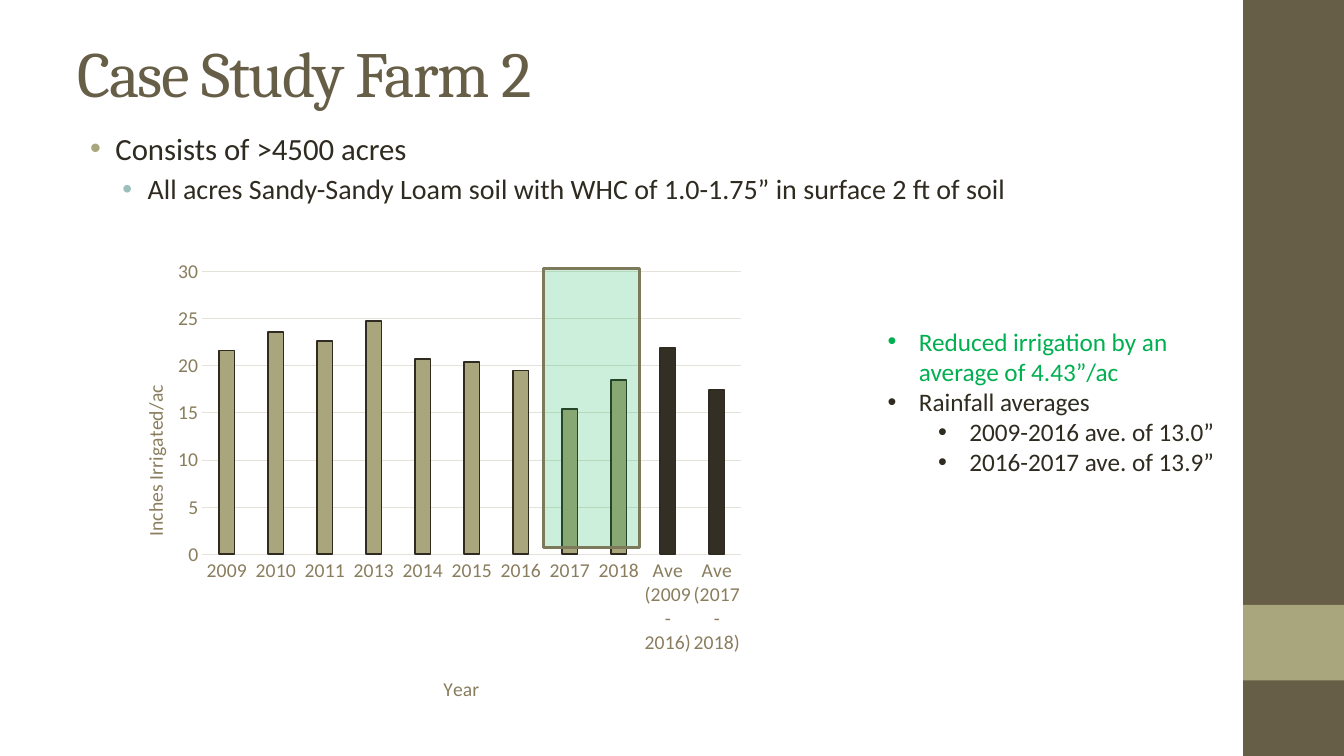
import pptx
import pptx.chart.data
import pptx.dml.color
import pptx.enum.chart
import pptx.enum.shapes
import pptx.enum.text
import pptx.oxml
import pptx.oxml.ns
import pptx.util
import lxml.etree

theme = {
    "heading_font": "Cambria", "body_font": "Calibri",
    "brown": "675E47", "khaki": "A9A57C", "teal": "9CBEBD", "ink": "2F2B20",
    "green": "00B050", "dark_bar": "342F24", "label": "897D5D",
    "grid": "E5E2D9", "frame": "7D7A5C",
    "title": 46, "point": 22, "subpoint": 20, "note": 18, "axis": 14,
}

deck = pptx.Presentation()
deck.slide_width = pptx.util.Inches(13.333)
deck.slide_height = pptx.util.Inches(7.5)
page = deck.slides.add_slide(deck.slide_layouts[6])
column = deck.slide_width / 160
row = deck.slide_height / 90


def place(left, top, width, height):
    return [int(left * column), int(top * row), int(width * column), int(height * row)]


def write(para, text, size, color="ink", font="body_font", bullet=None, indent=0, hang=0, before=0):
    para.space_before = pptx.util.Pt(before)
    if bullet:
        properties = para._p.get_or_add_pPr()
        properties.set("marL", str(pptx.util.Inches(indent)))
        properties.set("indent", str(-pptx.util.Inches(hang)))
        for markup in (f'<a:buClr %s><a:srgbClr val="{theme[bullet]}"/></a:buClr>',
                       '<a:buFont %s typeface="Arial"/>', '<a:buChar %s char="•"/>'):
            properties.append(pptx.oxml.parse_xml(markup % pptx.oxml.ns.nsdecls("a")))
    span = para.add_run()
    span.text = text
    span.font.size = pptx.util.Pt(theme[size])
    span.font.name = theme[font]
    span.font.bold = False
    span.font.color.rgb = pptx.dml.color.RGBColor.from_string(theme[color])
    return span


for top, height, color in [(0, 90, "brown"), (72, 9, "khaki")]:
    band = page.shapes.add_shape(pptx.enum.shapes.MSO_SHAPE.RECTANGLE, *place(148, top, 12, height))
    band.shadow.inherit = False
    band.fill.solid()
    band.fill.fore_color.rgb = pptx.dml.color.RGBColor.from_string(theme[color])
    band.line.fill.background()

title = page.shapes.add_textbox(*place(8, 1, 133.3, 15)).text_frame
title.word_wrap = True
title.vertical_anchor = pptx.enum.text.MSO_ANCHOR.MIDDLE
heading = write(title.paragraphs[0], "Case Study Farm 2", "title", "brown", "heading_font")
heading._r.get_or_add_rPr().set("spc", "-100")

overview = [
    ("Consists of >4500 acres", dict(size="point", bullet="khaki", indent=0.38, hang=0.25)),
    ("All acres Sandy-Sandy Loam soil with WHC of 1.0-1.75” in surface 2 ft of soil",
     dict(size="subpoint", bullet="teal", indent=0.7, hang=0.25, before=4)),
]
note = dict(size="note", bullet="ink", indent=0.31, hang=0.31)
findings = [
    ("Reduced irrigation by an average of 4.43”/ac", note | dict(color="green", bullet="green")),
    ("Rainfall averages", note),
    ("2009-2016 ave. of 13.0”", note | dict(indent=0.81)),
    ("2016-2017 ave. of 13.9”", note | dict(indent=0.81)),
]
for area, items in [((8, 14.8, 133.3, 19.4), overview), ((104.5, 38.2, 44.3, 19.4), findings)]:
    frame = page.shapes.add_textbox(*place(*area)).text_frame
    frame.word_wrap = True
    for index, (text, style) in enumerate(items):
        para = frame.add_paragraph() if index else frame.paragraphs[0]
        para.level = int(style["indent"] > 0.5)
        write(para, text, **style)

data = pptx.chart.data.CategoryChartData()
data.categories = ["2009", "2010", "2011", "2013", "2014", "2015", "2016", "2017", "2018",
                   "Ave (2009-2016)", "Ave (2017-2018)"]
data.add_series("Series 1", [21.6, 23.6, 22.6, 24.7, 20.7, 20.4, 19.5, 15.4, 18.5, 21.9, 17.4])
chart = page.shapes.add_chart(pptx.enum.chart.XL_CHART_TYPE.COLUMN_CLUSTERED,
                              *place(13.4, 29.8, 76.4, 55.7), data).chart
chart.has_legend = False
chart.has_title = False
chart.font.name = theme["body_font"]
chart.font.size = pptx.util.Pt(theme["axis"])
chart.font.color.rgb = pptx.dml.color.RGBColor.from_string(theme["ink"])

years, inches = chart.category_axis, chart.value_axis
for axis, text in [(years, "Year"), (inches, "Inches Irrigated/ac")]:
    axis.major_tick_mark = pptx.enum.chart.XL_TICK_MARK.NONE
    axis.minor_tick_mark = pptx.enum.chart.XL_TICK_MARK.NONE
    axis.tick_labels.font.name = theme["body_font"]
    axis.tick_labels.font.size = pptx.util.Pt(theme["axis"])
    axis.tick_labels.font.color.rgb = pptx.dml.color.RGBColor.from_string(theme["label"])
    write(axis.axis_title.text_frame.paragraphs[0], text, "axis", "label")
inches.axis_title.text_frame._txBody.bodyPr.set("rot", "-5400000")
inches.axis_title.text_frame._txBody.bodyPr.set("vert", "horz")
inches.minimum_scale, inches.maximum_scale, inches.major_unit = 0, 30, 5
inches.format.line.fill.background()
for line in (years.format.line, inches.major_gridlines.format.line):
    line.color.rgb = pptx.dml.color.RGBColor.from_string(theme["grid"])
    line.width = pptx.util.Pt(0.75)

layouts = [
    (chart._chartSpace.chart.plotArea, dict(x=0.14, y=0.045, w=0.84, h=0.605)),
    (years.axis_title._element, dict(x=0.51, y=0.9)),
    (inches.axis_title._element, dict(x=0.04, y=0.28)),
]
for part, shares in layouts:
    for old in part.findall(pptx.oxml.ns.qn("c:layout")):
        part.remove(old)
    layout = pptx.oxml.parse_xml(f'<c:layout {pptx.oxml.ns.nsdecls("c")}><c:manualLayout/></c:layout>')
    settings = {"xMode": "edge", "yMode": "edge"} | shares
    if "w" in shares:
        settings = {"layoutTarget": "inner"} | settings
    for name, value in settings.items():
        lxml.etree.SubElement(layout[0], pptx.oxml.ns.qn(f"c:{name}")).set("val", str(value))
    text = part.find(pptx.oxml.ns.qn("c:tx"))
    part.insert(0 if text is None else 1, layout)

plot = chart.plots[0]
plot.gap_width = 219
plot.overlap = -27
plot.vary_by_categories = False
bars = plot.series[0]
averages = [bars.points[index] for index in (9, 10)]
for part, color in [(bars, "khaki")] + [(average, "dark_bar") for average in averages]:
    part.format.fill.solid()
    part.format.fill.fore_color.rgb = pptx.dml.color.RGBColor.from_string(theme[color])
    part.format.line.color.rgb = pptx.dml.color.RGBColor.from_string(theme["ink"])
    part.format.line.width = pptx.util.Pt(1.25)

highlight = page.shapes.add_shape(pptx.enum.shapes.MSO_SHAPE.RECTANGLE, *place(64.7, 32, 11.4, 33.2))
highlight.shadow.inherit = False
highlight.fill.solid()
highlight.fill.fore_color.rgb = pptx.dml.color.RGBColor.from_string(theme["green"])
tint = highlight._element.spPr.find(".//" + pptx.oxml.ns.qn("a:srgbClr"))
lxml.etree.SubElement(tint, pptx.oxml.ns.qn("a:alpha")).set("val", "20000")
highlight.line.color.rgb = pptx.dml.color.RGBColor.from_string(theme["frame"])
highlight.line.width = pptx.util.Pt(2)

deck.save("out.pptx")
